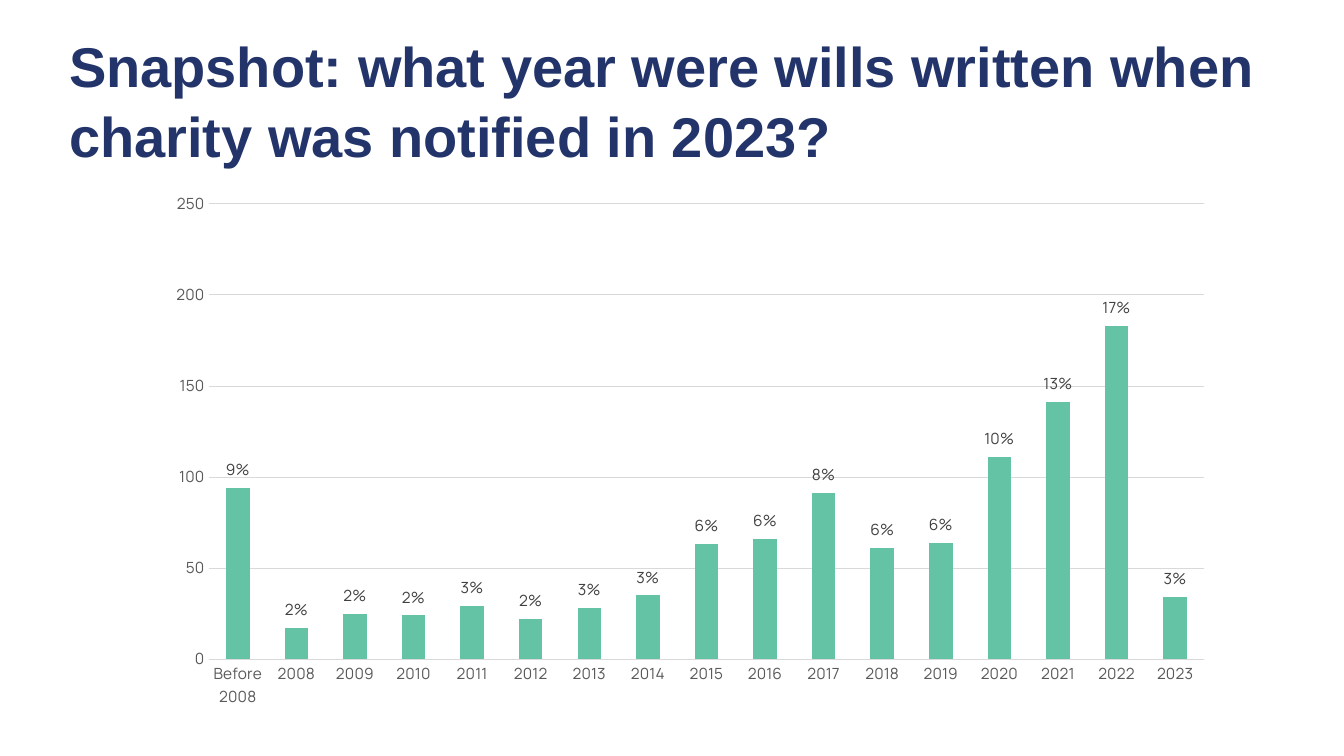
from lxml import etree
from pptx import Presentation
from pptx.chart.data import CategoryChartData
from pptx.dml.color import RGBColor
from pptx.enum.chart import XL_CHART_TYPE as CHART, XL_TICK_MARK as TICK
from pptx.enum.text import MSO_ANCHOR as ANCHOR, PP_ALIGN as ALIGN
from pptx.oxml.ns import qn
from pptx.util import Emu, Pt

TITLE = "Snapshot: what year were wills written when charity was notified in 2023?"
YEARS = ["Before 2008"] + [str(year) for year in range(2008, 2024)]
WILLS = [94, 17, 25, 24, 29, 22, 28, 35, 63, 66, 91, 61, 64, 111, 141, 183, 34]
LABEL_GAP = 10
SHARES = [0.09, 0.02, 0.02, 0.02, 0.03, 0.02, 0.03, 0.03, 0.06,
          0.06, 0.08, 0.06, 0.06, 0.1, 0.13, 0.17, 0.03]

COLORS = {"title": "223469", "bar": "64C3A5", "axis": "595959",
          "grid": "D9D9D9", "label": "404040", "white": "FFFFFF"}
PX = 9071  # EMU in one px
SLIDE = (1344, 756)
TITLE_BOX = (59, 26, 1331, 146)
CHART_BOX = (137, 181, 1068, 546)
PLOT = {"x": 0.067, "y": 0.042, "w": 0.933, "h": 0.834}


def px(*lengths):
    return [Emu(n * PX) for n in lengths]


def rgb(name):
    return RGBColor.from_string(COLORS[name])


def style(font, size, color, name="Manrope", bold=False):
    font.size, font.name, font.bold = Pt(size), name, bold
    font.color.rgb = rgb(color)


def write(sp, text, spacing=1.0, **fmt):
    tf = sp.text_frame
    tf.word_wrap = True
    tf.vertical_anchor = ANCHOR.MIDDLE
    p = tf.paragraphs[0]
    p.alignment, p.line_spacing = ALIGN.LEFT, spacing
    r = p.add_run()
    r.text = text
    style(r.font, **fmt)


def style_line(line, color):
    line.color.rgb = rgb(color)
    line.width = Pt(0.75)


def set_inner_plot(chart):
    """Fix the plot area inside the axes as fractions of the chart."""
    area = chart.element.find(".//" + qn("c:plotArea"))
    old = area.find(qn("c:layout"))
    if old is not None:
        area.remove(old)
    layout = etree.Element(qn("c:layout"))
    area.insert(0, layout)
    manual = etree.SubElement(layout, qn("c:manualLayout"))
    settings = {"layoutTarget": "inner", "xMode": "edge", "yMode": "edge", **PLOT}
    for tag, value in settings.items():
        etree.SubElement(manual, qn("c:" + tag)).set("val", str(value))


def add_wills_chart(slide):
    data = CategoryChartData()
    data.categories = YEARS
    data.add_series("Series 1", WILLS)
    data.add_series("Series 2", [LABEL_GAP] * len(YEARS))
    data.add_series("Series 3", SHARES, number_format="0%")
    chart = slide.shapes.add_chart(CHART.COLUMN_STACKED, *px(*CHART_BOX), data).chart
    chart.has_title = chart.has_legend = False
    style(chart.font, 11, "axis")
    set_inner_plot(chart)

    for axis in (chart.category_axis, chart.value_axis):
        axis.major_tick_mark = axis.minor_tick_mark = TICK.NONE
        style(axis.tick_labels.font, 11, "axis")
    style_line(chart.category_axis.format.line, "grid")
    values = chart.value_axis
    values.minimum_scale, values.maximum_scale, values.major_unit = 0, 250, 50
    values.format.line.fill.background()
    values.has_major_gridlines = True
    style_line(values.major_gridlines.format.line, "grid")

    plot = chart.plots[0]
    plot.vary_by_categories = False
    plot.gap_width, plot.overlap = 150, 100
    wills, gap, shares = plot.series
    wills.format.fill.solid()
    wills.format.fill.fore_color.rgb = rgb("bar")
    for hidden in (gap, shares):
        hidden.format.fill.background()
        hidden.format.line.fill.background()
    labels = shares.data_labels
    labels.show_value = True
    labels.number_format, labels.number_format_is_linked = "0%", False
    style(labels.font, 11, "label")


def main():
    prs = Presentation()
    prs.slide_width, prs.slide_height = px(*SLIDE)
    slide = prs.slides.add_slide(prs.slide_layouts[5])
    slide.background.fill.solid()
    slide.background.fill.fore_color.rgb = rgb("white")
    add_wills_chart(slide)
    title = slide.shapes.title
    title.left, title.top, title.width, title.height = px(*TITLE_BOX)
    write(title, TITLE, spacing=1.04, size=40, color="title", name="Arial", bold=True)
    prs.save("out.pptx")


if __name__ == "__main__":
    main()
